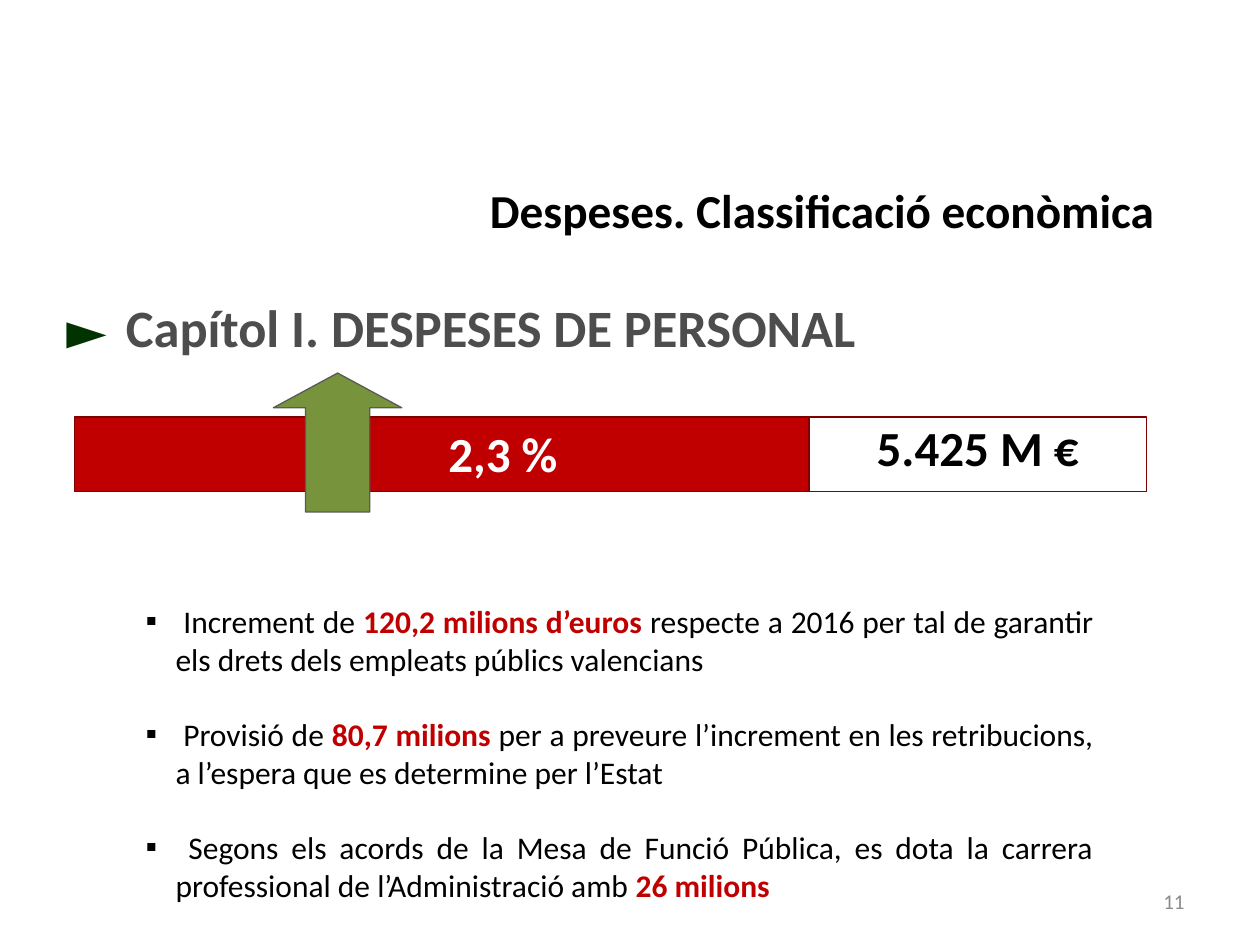
from lxml import etree
from pptx import Presentation
from pptx.dml.color import RGBColor
from pptx.enum.shapes import MSO_SHAPE as Shape
from pptx.enum.text import MSO_ANCHOR as Anchor, PP_ALIGN as Align
from pptx.oxml.ns import qn
from pptx.util import Cm, Pt

RED = "C00000"
BLACK = "000000"
POINTS = [
    [(" Increment de ", False), ("120,2 milions d’euros ", True),
     ("respecte a 2016 per tal de garantir els drets dels empleats públics valencians", False)],
    [(" Provisió de ", False), ("80,7 milions ", True),
     ("per a preveure l’increment en les retribucions, a l’espera que es determine per l’Estat", False)],
    [(" Segons els acords de la Mesa de Funció Pública, es dota la carrera professional "
      "de l’Administració amb ", False), ("26 milions", True)],
]


def color(hex_code):
    return RGBColor.from_string(hex_code)


def style(font, size, hex_code, bold):
    font.name = "Calibri"
    font.size = Pt(size)
    font.bold = bold
    font.color.rgb = color(hex_code)


def write(box, text, size, hex_code, bold=True, align=Align.LEFT, anchor=Anchor.TOP):
    frame = box.text_frame
    frame.word_wrap = True
    frame.vertical_anchor = anchor
    frame.text = text
    para = frame.paragraphs[0]
    para.alignment = align
    style(para.runs[0].font, size, hex_code, bold)
    return frame


def add_label(page, place, text, size, hex_code, **options):
    box = page.shapes.add_textbox(*map(Cm, place))
    write(box, text, size, hex_code, **options)


def add_block(page, kind, place, fill, line):
    block = page.shapes.add_shape(kind, *map(Cm, place))
    block.shadow.inherit = False
    if fill:
        block.fill.solid()
        block.fill.fore_color.rgb = color(fill)
    else:
        block.fill.background()
    block.line.color.rgb = color(line)
    block.line.width = Pt(0.75)
    return block


def add_bullet(para, symbol, indent):
    props = para._p.get_or_add_pPr()
    props.set("marL", str(indent))
    props.set("indent", str(-indent))
    etree.SubElement(props, qn("a:buFont")).set("typeface", "Calibri")
    etree.SubElement(props, qn("a:buChar")).set("char", symbol)


def add_points(page, place, points):
    frame = page.shapes.add_textbox(*map(Cm, place)).text_frame
    frame.word_wrap = True
    for number, parts in enumerate(points):
        para = frame.add_paragraph() if number else frame.paragraphs[0]
        add_bullet(para, "▪", Cm(0.6))
        para.alignment = Align.JUSTIFY
        if number:
            para.space_before = Pt(21.5)
        for text, strong in parts:
            span = para.add_run()
            span.text = text
            style(span.font, 18, RED if strong else BLACK, strong)


def add_bar(page):
    """Red bar with the growth rate, total beside it and an arrow on top."""
    top, height = 8.41, 1.5
    rate = add_block(page, Shape.RECTANGLE, (1.5, top, 14.81, height), RED, "800000")
    frame = write(rate, "2,3 %", 28, "FFFFFF", align=Align.CENTER)
    frame.margin_left = Cm(2.72)

    total = add_block(page, Shape.RECTANGLE, (16.31, top, 6.8, height), None, "800000")
    frame = write(total, "5.425 M €", 28, BLACK, align=Align.CENTER, anchor=Anchor.MIDDLE)
    frame.paragraphs[0].line_spacing = 0.7

    arrow = add_block(page, Shape.DOWN_ARROW, (5.51, 7.52, 2.59, 2.8), "77933C", "595959")
    arrow.adjustments[0] = 0.5
    arrow.adjustments[1] = 0.27
    arrow.rotation = 180


def main():
    deck = Presentation()
    deck.slide_width, deck.slide_height = Cm(25.4), Cm(19.05)
    page = deck.slides.add_slide(deck.slide_layouts[6])
    add_label(page, (8.71, 3.53, 14.81, 1.4), "Despeses. Classificació econòmica", 27, BLACK,
              align=Align.RIGHT)
    add_label(page, (2.29, 5.82, 19.41, 1.52), "Capítol I. DESPESES DE PERSONAL", 30, "4D4D4D")
    add_label(page, (1.09, 5.87, 1.4, 1.52), "►", 30, "003300")
    add_bar(page)
    add_points(page, (2.69, 12.01, 19.61, 6.35), POINTS)
    add_label(page, (18.21, 17.65, 5.92, 1.02), "11", 12, "8B8B8B", bold=False,
              align=Align.RIGHT, anchor=Anchor.MIDDLE)
    deck.save("out.pptx")


if __name__ == "__main__":
    main()
